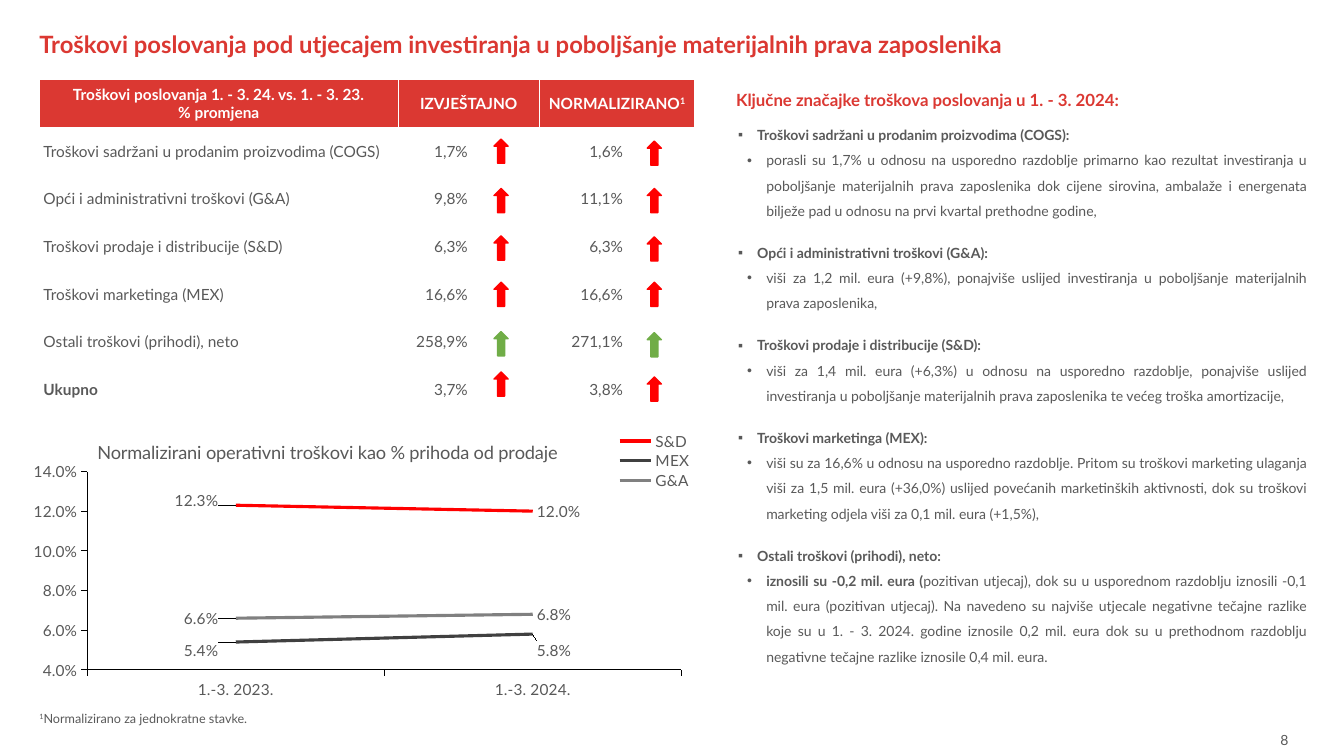
from lxml import etree
from pptx import Presentation
from pptx import util as u
from pptx.chart.data import CategoryChartData
from pptx.dml.color import RGBColor
from pptx.enum import chart as ch, shapes, text
from pptx.oxml.ns import qn

FONT = "Lato"
COLORS = {"brand": "DB3832", "body": "595959", "white": "FFFFFF", "black": "000000",
          "bad": "FF0000", "good": "70AD47", "dark": "404040", "grey": "808080"}

TITLE = "Troškovi poslovanja pod utjecajem investiranja u poboljšanje materijalnih prava zaposlenika"
FOOTNOTE = [("1", "super"), ("Normalizirano za jednokratne stavke.", "")]
PAGE_NUMBER = "8"

HEADER = [
    [[("Troškovi poslovanja 1. - 3. 24. vs. 1. - 3. 23.", "")], [("% promjena", "")]],
    [[("IZVJEŠTAJNO", "")]],
    [[("NORMALIZIRANO", ""), ("1", "super")]],
]
COSTS = [
    ("Troškovi sadržani u prodanim proizvodima (COGS)", "1,7%", "1,6%", "bad", 1.38, 1.4),
    ("Opći i administrativni troškovi (G&A)", "9,8%", "11,1%", "bad", 1.87, 1.87),
    ("Troškovi prodaje i distribucije (S&D)", "6,3%", "6,3%", "bad", 2.34, 2.35),
    ("Troškovi marketinga (MEX)", "16,6%", "16,6%", "bad", 2.8, 2.8),
    ("Ostali troškovi (prihodi), neto", "258,9%", "271,1%", "good", 3.29, 3.3),
    ("Ukupno", "3,7%", "3,8%", "bad", 3.69, 3.74),
]
COLUMN_WIDTHS = [3.56, 1.4, 1.54]
ARROW_LEFTS = [4.9, 6.42]

NOTES_HEADING = "Ključne značajke troškova poslovanja u 1. - 3. 2024:"
NOTES = [
    ("Troškovi sadržani u prodanim proizvodima (COGS):",
     [("porasli su 1,7% u odnosu na usporedno razdoblje primarno kao rezultat investiranja u "
       "poboljšanje materijalnih prava zaposlenika dok cijene sirovina, ambalaže i energenata "
       "bilježe pad u odnosu na prvi kvartal prethodne godine,", "")]),
    ("Opći i administrativni troškovi (G&A):",
     [("viši za 1,2 mil. eura (+9,8%), ponajviše uslijed investiranja u poboljšanje "
       "materijalnih prava zaposlenika,", "")]),
    ("Troškovi prodaje i distribucije (S&D):",
     [("viši za 1,4 mil. eura (+6,3%) u odnosu na usporedno razdoblje, ponajviše uslijed "
       "investiranja u poboljšanje materijalnih prava zaposlenika te većeg troška "
       "amortizacije,", "")]),
    ("Troškovi marketinga (MEX):",
     [("viši su za 16,6% u odnosu na usporedno razdoblje. Pritom su troškovi marketing ulaganja "
       "viši za 1,5 mil. eura (+36,0%) uslijed povećanih marketinških aktivnosti, dok su "
       "troškovi marketing odjela viši za 0,1 mil. eura (+1,5%),", "")]),
    ("Ostali troškovi (prihodi), neto:",
     [("iznosili su -0,2 mil. eura (", "bold"),
      ("pozitivan utjecaj), dok su u usporednom razdoblju iznosili -0,1 mil. eura (pozitivan "
       "utjecaj). Na navedeno su najviše utjecale negativne tečajne razlike koje su u 1. - 3. "
       "2024. godine iznosile 0,2 mil. eura dok su u prethodnom razdoblju negativne tečajne "
       "razlike iznosile 0,4 mil. eura.", "")]),
]

CHART_TITLE = "Normalizirani operativni troškovi kao % prihoda od prodaje"
PERIODS = ["1.-3. 2023.", "1.-3. 2024."]
SERIES = [
    ("S&D", (0.123, 0.12), "bad", [(-0.02, -0.02), (0, 0)]),
    ("MEX", (0.054, 0.058), "dark", [(-0.02, 0.03), (0, 0.06)]),
    ("G&A", (0.066, 0.068), "grey", [(-0.02, 0), (0, 0)]),
]
LABEL_SIDES = [ch.XL_LABEL_POSITION.LEFT, ch.XL_LABEL_POSITION.RIGHT]


def rgb(name):
    return RGBColor.from_string(COLORS[name])


def style(font, size, color="body", bold=False):
    font.name, font.size, font.bold = FONT, u.Pt(size), bold
    font.color.rgb = rgb(color)


def write(para, pieces, size, color="body", bold=False, align=text.PP_ALIGN.LEFT):
    para.alignment = align
    style(para.font, size, color, bold)
    for words, mark in pieces:
        span = para.add_run()
        span.text = words
        if mark == "bold":
            span.font.bold = True
        if mark == "super":
            span._r.get_or_add_rPr().set("baseline", "30000")


def place(box, left, top, width, height):
    box.left, box.top, box.width, box.height = map(u.Inches, (left, top, width, height))


def set_margins(item, left=0, top=0, right=0, bottom=0):
    item.margin_left, item.margin_top = u.Inches(left), u.Inches(top)
    item.margin_right, item.margin_bottom = u.Inches(right), u.Inches(bottom)


def add_note(frame, pieces, size, color="body", bold=False, bullet=None, left=0, after=0):
    para = frame.paragraphs[0] if not frame.paragraphs[0].runs else frame.add_paragraph()
    props = para._p.get_or_add_pPr()
    props.set("marL", str(u.Inches(left)))
    props.set("indent", str(u.Inches(-0.19 if bullet else 0)))
    if bullet:
        etree.SubElement(props, qn("a:buChar")).set("char", bullet)
    else:
        etree.SubElement(props, qn("a:buNone"))
    para.line_spacing, para.space_before, para.space_after = 1.5, u.Pt(0), u.Pt(after)
    write(para, pieces, size, color, bold, text.PP_ALIGN.JUSTIFY)


def set_layout(parent, index, target=None, **values):
    for old in parent.findall(qn("c:layout")):
        parent.remove(old)
    layout = etree.Element(qn("c:layout"))
    manual = etree.SubElement(layout, qn("c:manualLayout"))
    if target:
        etree.SubElement(manual, qn("c:layoutTarget")).set("val", target)
    for name, value in values.items():
        etree.SubElement(manual, qn("c:" + name)).set("val", str(value))
    parent.insert(index, layout)


def add_costs_table(page):
    table = page.shapes.add_table(len(COSTS) + 1, 3, u.Inches(0.39), u.Inches(0.79),
                                  u.Inches(6.5), u.Inches(3.31)).table
    for column, width in zip(table.columns, COLUMN_WIDTHS):
        column.width = u.Inches(width)
    rows = [HEADER] + [[[[(words, "")]] for words in cost[:3]] for cost in COSTS]
    for r, row in enumerate(rows):
        for c, lines in enumerate(row):
            cell = table.cell(r, c)
            cell.fill.solid()
            cell.fill.fore_color.rgb = rgb("white" if r else "brand")
            cell.vertical_anchor = text.MSO_ANCHOR.MIDDLE
            set_margins(cell, left=0.04 if r and not c else 0, right=0.71 if r and c else 0)
            if not r:
                align = text.PP_ALIGN.CENTER
            else:
                align = text.PP_ALIGN.RIGHT if c else text.PP_ALIGN.LEFT
            bold = r == 0 or (r == len(COSTS) and c == 0)
            for n, pieces in enumerate(lines):
                para = cell.text_frame.add_paragraph() if n else cell.text_frame.paragraphs[0]
                write(para, pieces, 11, "body" if r else "white", bold, align)
    for *_, color, first_top, second_top in COSTS:
        for left, top in zip(ARROW_LEFTS, (first_top, second_top)):
            arrow = page.shapes.add_shape(shapes.MSO_SHAPE.UP_ARROW, u.Inches(left),
                                          u.Inches(top), u.Inches(0.14), u.Inches(0.24))
            arrow.shadow.inherit = False
            arrow.fill.solid()
            arrow.fill.fore_color.rgb = arrow.line.color.rgb = rgb(color)
            arrow.line.width = u.Pt(1)


def add_costs_chart(page):
    data = CategoryChartData(number_format="0.0%")
    data.categories = PERIODS
    for name, values, *_ in SERIES:
        data.add_series(name, values)
    chart = page.shapes.add_chart(ch.XL_CHART_TYPE.LINE, u.Inches(0.27), u.Inches(4.22),
                                  u.Inches(6.62), u.Inches(2.71), data).chart
    style(chart.font, 11)
    chart.has_title = True
    write(chart.chart_title.text_frame.paragraphs[0], [(CHART_TITLE, "")], 13)
    set_layout(chart.element.xpath("c:chart/c:title")[0], 1,
               xMode="edge", yMode="edge", x=0.1, y=0.04)
    chart.has_legend = True
    chart.legend.position = ch.XL_LEGEND_POSITION.RIGHT
    chart.legend.include_in_layout = False
    style(chart.legend.font, 11)
    set_layout(chart.element.xpath("c:chart/c:legend")[0], 1,
               xMode="edge", yMode="edge", x=0.88, y=0.02, w=0.12, h=0.22)
    set_layout(chart.element.xpath("c:chart/c:plotArea")[0], 0, "inner",
               xMode="edge", yMode="edge", x=0.09, y=0.17, w=0.89, h=0.73)
    for axis in (chart.category_axis, chart.value_axis):
        axis.has_major_gridlines = False
        axis.major_tick_mark = ch.XL_TICK_MARK.OUTSIDE
        axis.format.line.color.rgb = rgb("black")
        axis.format.line.width = u.Pt(0.75)
        style(axis.tick_labels.font, 11)
    scale = chart.value_axis
    scale.minimum_scale, scale.maximum_scale, scale.major_unit = 0.04, 0.14, 0.02
    scale.tick_labels.number_format = "0.0%"
    scale.tick_labels.number_format_is_linked = False
    chart.plots[0].vary_by_categories = False
    for line, (_, _, color, _) in zip(chart.plots[0].series, SERIES):
        line.smooth = False
        line.format.line.color.rgb = rgb(color)
        line.format.line.width = u.Pt(2.25)
        for n, side in enumerate(LABEL_SIDES):
            label = line.points[n].data_label
            style(label.font, 11)
            label.position = side
    offsets = [offset for *_, pair in SERIES for offset in pair]
    for label, (x, y) in zip(chart.element.xpath(".//c:dLbl"), offsets):
        if x or y:
            set_layout(label, 1, x=x, y=y)


def main():
    deck = Presentation()
    deck.slide_width, deck.slide_height = u.Inches(13.33), u.Inches(7.5)
    page = deck.slides.add_slide(deck.slide_layouts[1])

    title, body = page.placeholders
    place(title, 0.39, 0.21, 12.68, 0.45)
    set_margins(title.text_frame, 0, 0.05, 0.1, 0.05)
    title.text_frame.vertical_anchor = text.MSO_ANCHOR.MIDDLE
    write(title.text_frame.paragraphs[0], [(TITLE, "")], 17, "brand", True)

    place(body, 7.3, 0.79, 5.66, 6)
    notes = body.text_frame
    set_margins(notes)
    notes.auto_size = text.MSO_AUTO_SIZE.NONE
    add_note(notes, [(NOTES_HEADING, "")], 12, "brand", True, after=6)
    for heading, detail in NOTES:
        add_note(notes, [(heading, "")], 10, bold=True, bullet="▪", left=0.21)
        add_note(notes, detail, 10, bullet="•", left=0.3, after=12)

    add_costs_table(page)
    add_costs_chart(page)

    footnote = page.shapes.add_textbox(u.Inches(0.39), u.Inches(7.05), u.Inches(8.45), u.Inches(0.3))
    set_margins(footnote.text_frame)
    footnote.text_frame.word_wrap = True
    write(footnote.text_frame.paragraphs[0], FOOTNOTE, 9)
    number = page.shapes.add_textbox(u.Inches(12.6), u.Inches(7.21), u.Inches(0.73), u.Inches(0.4))
    number.text_frame.word_wrap = True
    write(number.text_frame.paragraphs[0], [(PAGE_NUMBER, "")], 10)
    deck.save("out.pptx")


if __name__ == "__main__":
    main()
